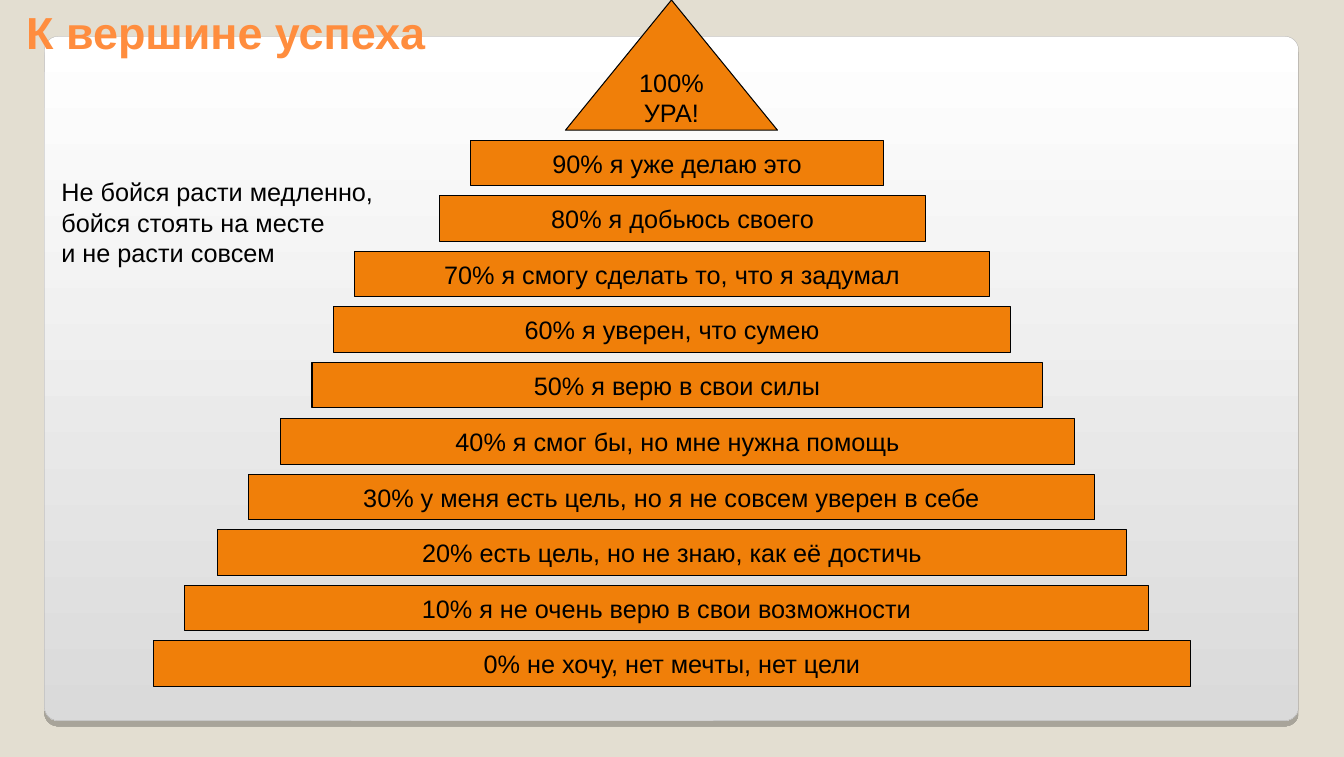
from dataclasses import dataclass

from lxml.etree import SubElement
from pptx import Presentation
from pptx.dml.color import RGBColor
from pptx.enum.shapes import MSO_SHAPE
from pptx.enum.text import MSO_ANCHOR, PP_ALIGN
from pptx.oxml.ns import qn
from pptx.util import Emu, Pt

PX = 9144
SLIDE_SIZE = (1331, 750)
STEP_HEIGHT = 45


@dataclass(frozen=True)
class Theme:
    """Colours, font and type sizes of the slide."""
    background: str = "E3DED1"
    panel_top: str = "FFFFFF"
    panel_bottom: str = "DADADA"
    panel_line: str = "A4A3A3"
    title: str = "FF8D3E"
    step: str = "F07F09"
    ink: str = "000000"
    font: str = "Arial"
    title_size: int = 32
    body_size: int = 18


THEME = Theme()

STEPS = [
    ("90% я уже делаю это", 466, 409),
    ("80% я добьюсь своего", 435, 482),
    ("70% я смогу сделать то, что я задумал", 351, 629),
    ("60% я уверен, что сумею", 330, 671),
    ("50% я верю в свои силы", 309, 723),
    ("40% я смог бы, но мне нужна помощь", 278, 786),
    ("30% у меня есть цель, но я не совсем уверен в себе", 246, 838),
    ("20% есть цель, но не знаю, как её достичь", 215, 901),
    ("10% я не очень верю в свои возможности", 183, 954),
    ("0% не хочу, нет мечты, нет цели", 152, 1027),
]


def rgb(code):
    """Turn a hex code into a colour."""
    return RGBColor.from_string(code)


def emu(box):
    """Turn px lengths into EMU."""
    return [Emu(length * PX) for length in box]


def write(frame, lines, size, color, align=PP_ALIGN.LEFT, bold=False):
    """Write each line as a paragraph with one formatted run."""
    for index, line in enumerate(lines):
        paragraph = frame.add_paragraph() if index else frame.paragraphs[0]
        paragraph.alignment = align
        run = paragraph.add_run()
        run.text = line
        run.font.name = THEME.font
        run.font.size = Pt(size)
        run.font.bold = bold
        run.font.color.rgb = rgb(color)


def add_panel(slide, box):
    """Place the shaded rounded panel behind everything else."""
    panel = slide.shapes.add_shape(MSO_SHAPE.ROUNDED_RECTANGLE, *emu(box))
    panel.adjustments[0] = 0.02
    panel.fill.gradient()
    panel.fill.gradient_angle = 270
    for stop, color in zip(panel.fill.gradient_stops, (THEME.panel_top, THEME.panel_bottom)):
        stop.color.rgb = rgb(color)
    panel.line.color.rgb = rgb(THEME.panel_line)
    panel.line.width = Pt(0.17)
    panel.shadow.inherit = False
    effects = panel._element.spPr.find(qn("a:effectLst"))
    shadow = SubElement(effects, qn("a:outerShdw"), blurRad="0", dist=str(Pt(4)),
                        dir="5400000", algn="t", rotWithShape="0")
    tint = SubElement(shadow, qn("a:srgbClr"), val=THEME.ink)
    SubElement(tint, qn("a:alpha"), val="25000")
    slide.shapes._spTree.insert(2, panel._element)


def add_title(slide, box, text):
    """Move and format the title placeholder."""
    title = slide.shapes.title
    title.left, title.top, title.width, title.height = emu(box)
    title.text_frame.vertical_anchor = MSO_ANCHOR.BOTTOM
    write(title.text_frame, [text], THEME.title_size, THEME.title, bold=True)


def add_block(slide, kind, box, lines):
    """Place one outlined block of the pyramid."""
    block = slide.shapes.add_shape(kind, *emu(box))
    block.shadow.inherit = False
    block.fill.solid()
    block.fill.fore_color.rgb = rgb(THEME.step)
    block.line.color.rgb = rgb(THEME.ink)
    block.line.width = Pt(0.75)
    block.text_frame.word_wrap = False
    block.text_frame.vertical_anchor = MSO_ANCHOR.MIDDLE
    write(block.text_frame, lines, THEME.body_size, THEME.ink, PP_ALIGN.CENTER)


def add_steps(slide, top, bottom):
    """Spread the steps evenly between two heights."""
    pitch = (bottom - top - STEP_HEIGHT) / (len(STEPS) - 1)
    for index, (label, left, width) in enumerate(STEPS):
        step_top = top + round(index * pitch)
        add_block(slide, MSO_SHAPE.RECTANGLE, (left, step_top, width, STEP_HEIGHT), [label])


def add_motto(slide, box, lines):
    """Place the motto beside the pyramid."""
    motto = slide.shapes.add_textbox(*emu(box))
    motto.text_frame.word_wrap = True
    write(motto.text_frame, lines, THEME.body_size, THEME.ink)


def main():
    """Build and save the slide."""
    deck = Presentation()
    deck.slide_width, deck.slide_height = emu(SLIDE_SIZE)
    slide = deck.slides.add_slide(deck.slide_layouts[5])
    slide.background.fill.solid()
    slide.background.fill.fore_color.rgb = rgb(THEME.background)
    add_panel(slide, (44, 36, 1242, 678))
    add_title(slide, (16, -62, 1087, 125), "К вершине успеха")
    add_steps(slide, 139, 680)
    add_block(slide, MSO_SHAPE.ISOSCELES_TRIANGLE, (560, 0, 210, 129), ["100%", "УРА!"])
    add_motto(slide, (51, 170, 396, 100),
              ["Не бойся расти медленно,", "бойся стоять на месте", "и не расти совсем"])
    deck.save("out.pptx")


if __name__ == "__main__":
    main()
